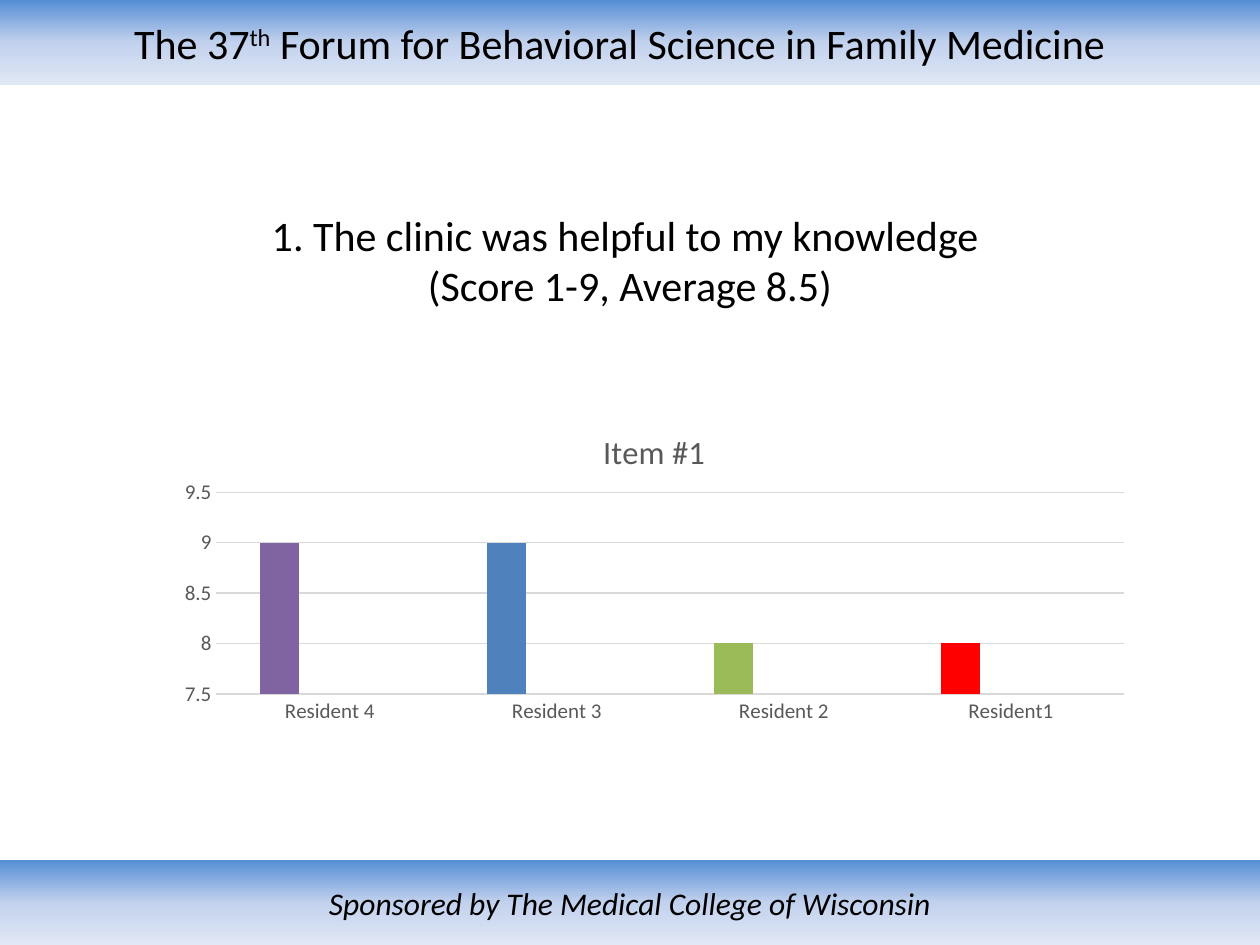
from copy import deepcopy

from pptx import Presentation
from pptx.chart.data import CategoryChartData
from pptx.dml.color import RGBColor
from pptx.enum.chart import XL_CHART_TYPE, XL_TICK_MARK
from pptx.enum.shapes import MSO_SHAPE
from pptx.enum.text import MSO_ANCHOR, PP_ALIGN
from pptx.oxml import parse_xml
from pptx.oxml.ns import qn
from pptx.util import Inches, Pt

WIDTH, HEIGHT = Inches(10), Inches(7.5)
BAND = 0.09  # banner height as a share of the slide
FONT = "Calibri"
COLORS = {
    "ink": "000000", "gray": "595959", "rule": "D9D9D9",
    "deep": "558ED5", "mid": "C2D1ED", "pale": "E1E8F5",
    "purple": "8064A2", "blue": "4F81BD", "green": "9BBB59",
    "red": "FF0000", "brick": "C0504D",
}


def rgb(name):
    return RGBColor.from_string(COLORS[name])


def place(x, y, w, h):
    """Turn shares of the slide into lengths."""
    return (int(x * WIDTH), int(y * HEIGHT), int(w * WIDTH), int(h * HEIGHT))


def style(font, size, color="ink", italic=False):
    font.name, font.size = FONT, Pt(size)
    font.bold, font.italic = False, italic
    font.color.rgb = rgb(color)


def write(frame, lines, size, italic=False):
    """Fill a frame with centred lines, each a list of (text, raised) runs."""
    frame.word_wrap = True
    frame.vertical_anchor = MSO_ANCHOR.MIDDLE
    for i, runs in enumerate(lines):
        para = frame.add_paragraph() if i else frame.paragraphs[0]
        para.alignment = PP_ALIGN.CENTER
        for text, raised in runs:
            run = para.add_run()
            run.text = text
            style(run.font, size, italic=italic)
            if raised:
                run.font._element.set("baseline", "30000")


def shade(fill):
    """Three-stop gradient from top to bottom."""
    fill.gradient()
    fill.gradient_angle = 270
    stops = fill._fill._gradFill.find(qn("a:gsLst"))
    stops.insert(1, deepcopy(stops[0]))
    for stop, name, pos in zip(fill.gradient_stops, ("deep", "mid", "pale"), (0, 0.5, 1)):
        stop.color.rgb = rgb(name)
        stop.position = pos


def banner(slide, top, runs, size, italic=False):
    shape = slide.shapes.add_shape(MSO_SHAPE.RECTANGLE, *place(0, top, 1, BAND))
    shape.shadow.inherit = False
    shape.line.fill.background()
    shade(shape.fill)
    write(shape.text_frame, [runs], size, italic)
    return shape


def pin(node, index, **shares):
    """Fix a chart part at shares of the chart's frame."""
    old = node.find(qn("c:layout"))
    if old is not None:
        node.remove(old)
    inner = '<c:layoutTarget val="inner"/>' if "w" in shares else ""
    modes = "".join(f'<c:{key}Mode val="edge"/>' for key in "xy")
    sizes = "".join(f'<c:{key} val="{val}"/>' for key, val in shares.items())
    node.insert(index, parse_xml(
        '<c:layout xmlns:c="http://schemas.openxmlformats.org/drawingml/2006/chart">'
        f"<c:manualLayout>{inner}{modes}{sizes}</c:manualLayout></c:layout>"))


def score_chart(slide):
    data = CategoryChartData()
    data.categories = ["Resident 4", "Resident 3", "Resident 2", "Resident1"]
    for name, vals in (("Series 1", (9, 9, 8, 8)),
                       ("Series 2", [None] * 4), ("Series 3", [None] * 4)):
        data.add_series(name, vals)
    chart = slide.shapes.add_chart(XL_CHART_TYPE.COLUMN_CLUSTERED,
                                   *place(0.133, 0.423, 0.775, 0.35), data).chart
    style(chart.font, 10)
    chart.has_legend = False

    # Title
    chart.has_title = True
    run = chart.chart_title.text_frame.paragraphs[0].add_run()
    run.text = "Item #1"
    style(run.font, 18.6, "gray")
    pin(chart.chart_title._element, 1, x=0.44, y=0.07)

    # Bars
    plot = chart.plots[0]
    plot.gap_width, plot.overlap, plot.vary_by_categories = 219, -27, False
    for series, name in zip(plot.series, ("blue", "brick", "green")):
        series.format.fill.solid()
        series.format.fill.fore_color.rgb = rgb(name)
    for i, name in {0: "purple", 2: "green", 3: "red"}.items():
        fill = plot.series[0].points[i].format.fill
        fill.solid()
        fill.fore_color.rgb = rgb(name)
    pin(plot._element.getparent(), 0, x=0.05, y=0.28, w=0.93, h=0.61)

    # Axes
    cats, vals = chart.category_axis, chart.value_axis
    for axis in (cats, vals):
        axis.major_tick_mark = axis.minor_tick_mark = XL_TICK_MARK.NONE
        style(axis.tick_labels.font, 12, "gray")
    vals.minimum_scale, vals.maximum_scale, vals.major_unit = 7.5, 9.5, 0.5
    vals.has_major_gridlines = True
    vals.format.line.fill.background()
    for line in (cats.format.line, vals.major_gridlines.format.line):
        line.color.rgb = rgb("rule")
        line.width = Pt(0.75)


def main():
    deck = Presentation()
    deck.slide_width, deck.slide_height = WIDTH, HEIGHT
    slide = deck.slides.add_slide(deck.slide_layouts[6])

    # Banners
    head = banner(slide, 0, [("The 37", False), ("th", True),
                  (" Forum for Behavioral Science in Family Medicine", False)], 24)
    head.text_frame.margin_right = Inches(0.26)
    banner(slide, 1 - BAND, [("Sponsored by The Medical College of Wisconsin", False)],
           18, italic=True)

    # Question
    box = slide.shapes.add_textbox(*place(0.05, 0.22, 0.9, 0.11))
    write(box.text_frame, [[("1. The clinic was helpful to my knowledge ", False)],
                           [("(Score 1-9, Average 8.5)", False)]], 24)

    # Scores
    score_chart(slide)
    deck.save("out.pptx")


if __name__ == "__main__":
    main()
